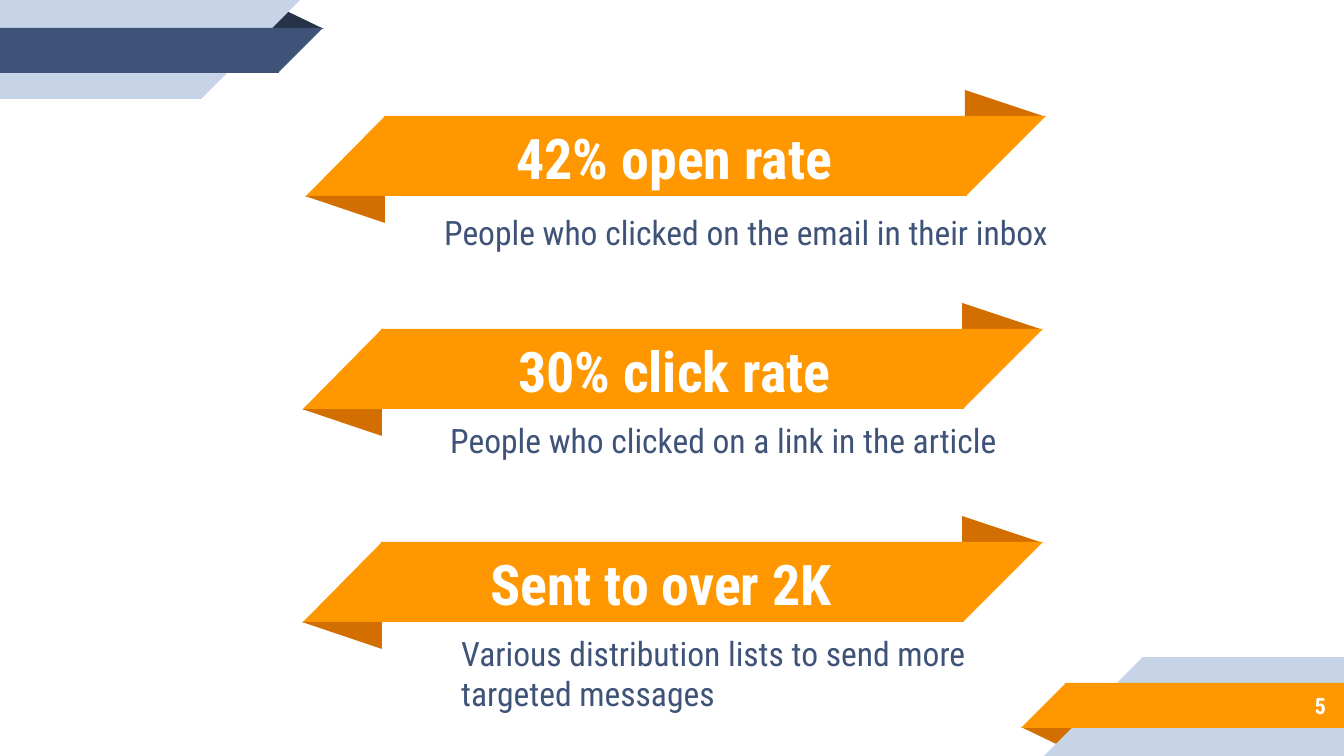
from pptx import Presentation
from pptx.dml.color import RGBColor
from pptx.enum.shapes import MSO_SHAPE
from pptx.enum.text import MSO_ANCHOR, PP_ALIGN
from pptx.util import Pt

RECT = MSO_SHAPE.RECTANGLE
RIGHT = MSO_SHAPE.RIGHT_TRIANGLE
FOLD = MSO_SHAPE.ISOSCELES_TRIANGLE
MIDDLE = MSO_ANCHOR.MIDDLE
LEFT, MID, END = PP_ALIGN.LEFT, PP_ALIGN.CENTER, PP_ALIGN.RIGHT

ORANGE = RGBColor(0xFF, 0x98, 0x00)
RUST = RGBColor(0xD2, 0x6F, 0x00)
PALE = RGBColor(0xC7, 0xD3, 0xE6)
NAVY = RGBColor(0x3F, 0x53, 0x78)
DARK = RGBColor(0x26, 0x32, 0x48)
WHITE = RGBColor(0xFF, 0xFF, 0xFF)
FONT = "Roboto Condensed"
PX = 914400 / 134.4

deck = Presentation()
deck.slide_width = round(1344 * PX)
deck.slide_height = round(756 * PX)
slide = deck.slides.add_slide(deck.slide_layouts[6])


def draw(kind, box, color, turn=0, tip=None):
    shape = slide.shapes.add_shape(kind, *[round(n * PX) for n in box])
    shape.shadow.inherit = False
    shape.fill.solid()
    shape.fill.fore_color.rgb = color
    shape.line.fill.background()
    shape.rotation = turn
    if tip is not None:
        shape.adjustments[0] = tip


def write(text, box, size, color, align, bold=False, gaps=(0, 0)):
    frame = slide.shapes.add_textbox(*[round(n * PX) for n in box]).text_frame
    frame.word_wrap = True
    frame.vertical_anchor = MIDDLE
    frame.margin_left = frame.margin_right = round(13.44 * PX)
    frame.margin_top = frame.margin_bottom = round(13.44 * PX)
    para = frame.paragraphs[0]
    para.alignment = align
    para.space_before, para.space_after = Pt(gaps[0]), Pt(gaps[1])
    run = para.add_run()
    run.text = text
    run.font.name = FONT
    run.font.size = Pt(size)
    run.font.bold = bold
    run.font.color.rgb = color


draw(FOLD, (1021, 727, 58, 19), RUST, 180, 0.32)
draw(RECT, (1142, 657, 202, 99), PALE)
draw(RIGHT, (1044, 657, 99, 99), PALE, 270)
draw(RECT, (1065, 683, 279, 45), ORANGE)
draw(RIGHT, (1021, 683, 45, 45), ORANGE, 270)

draw(FOLD, (266, 10, 58, 19), DARK, 0, 0.32)
draw(RECT, (0, 0, 202, 99), PALE)
draw(RIGHT, (201, 0, 99, 99), PALE, 90)
draw(RECT, (0, 28, 279, 45), NAVY)
draw(RIGHT, (278, 28, 45, 45), NAVY, 90)

write("5", (1120, 682, 219, 47), 12, WHITE, END, True)

banners = [
    (305, "42% open rate", 387,
     "People who clicked on the email in their inbox", (430, 198, 633, 68), MID),
    (302, "30% click rate", 387,
     "People who clicked on a link in the article", (437, 410, 575, 60), LEFT),
    (302, "Sent to over 2K ", 380,
     "Various distribution lists to send more targeted messages",
     (448, 643, 575, 60), LEFT),
]
for row, (x, title, left, note, box, align) in enumerate(banners):
    y = 116 + 213 * row
    draw(FOLD, (x + 660, y - 26, 81, 27), RUST, 0, 0)
    draw(RECT, (x + 79, y, 583, 80), ORANGE)
    draw(RIGHT, (x + 661, y, 80, 80), ORANGE, 90)
    draw(RIGHT, (x, y, 81, 80), ORANGE, 270)
    draw(FOLD, (x, y + 80, 80, 27), RUST, 180, 0)
    write(title, (left, y + 2, 575, 78), 30, WHITE, MID, True)
    write(note, box, 18, NAVY, align, gaps=(6, 10))

deck.save("out.pptx")
